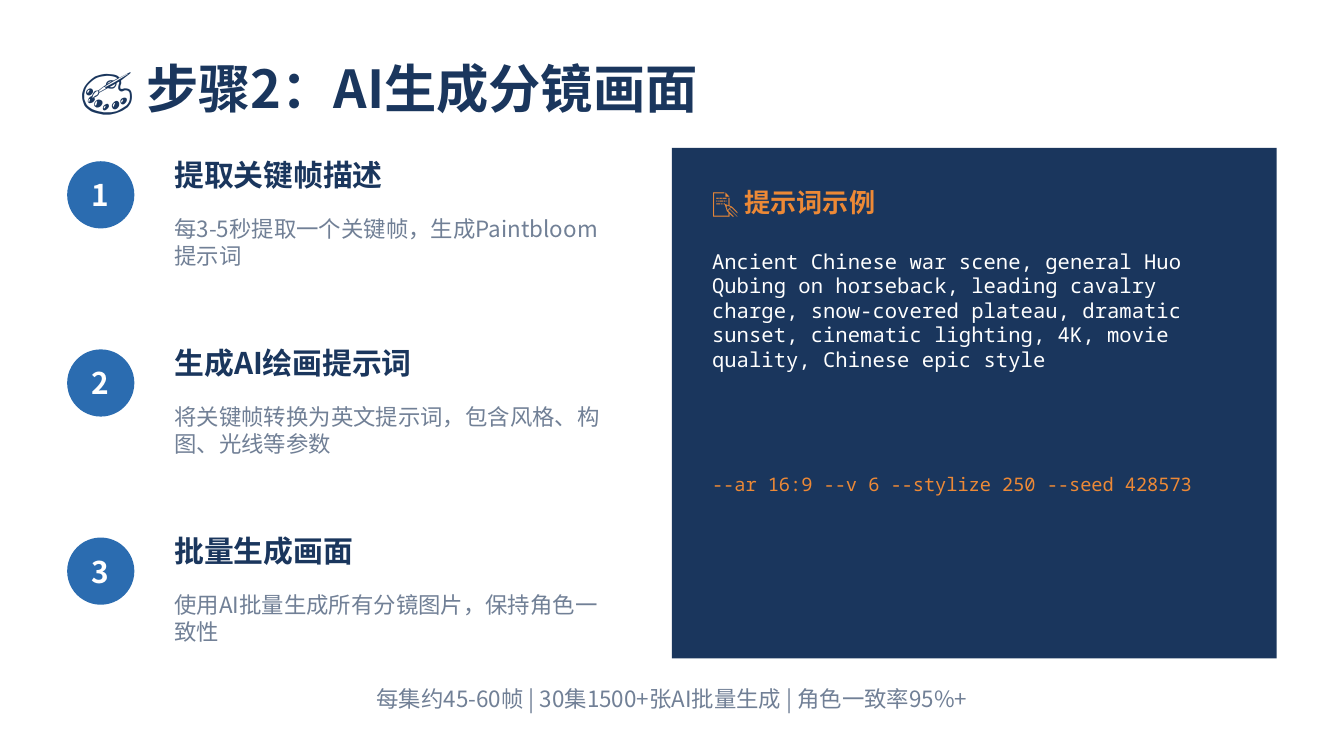
"""Build the storyboard slide: three numbered steps beside a prompt example."""
from lxml.etree import SubElement
from pptx import Presentation
from pptx.dml.color import RGBColor
from pptx.enum.shapes import MSO_SHAPE
from pptx.enum.text import MSO_ANCHOR, PP_ALIGN
from pptx.oxml.ns import qn
from pptx.util import Pt

PX = 4572
SANS, MONO = "Noto Sans CJK SC", "Noto Sans Mono"
NAVY, BLUE, GRAY, ORANGE, WHITE = "1A365D", "2B6CB0", "718096", "ED8936", "FFFFFF"


def add_panel(preset, box, color):
    panel = slide.shapes.add_shape(preset, *[n * PX for n in box])
    panel.shadow.inherit = False
    panel.fill.solid()
    panel.fill.fore_color.rgb = RGBColor.from_string(color)
    panel.line.fill.background()


def add_text(words, box, size, color, bold=False, face=SANS,
             align=PP_ALIGN.LEFT, anchor=MSO_ANCHOR.MIDDLE):
    frame = slide.shapes.add_textbox(*[n * PX for n in box]).text_frame
    frame.word_wrap = True
    frame.vertical_anchor = anchor
    paragraph = frame.paragraphs[0]
    paragraph.alignment = align
    run = paragraph.add_run()
    run.text = words
    for key, value in {"size": Pt(size), "bold": bold, "name": face}.items():
        setattr(run.font, key, value)
    run.font.color.rgb = RGBColor.from_string(color)
    SubElement(run.font._element, qn("a:ea"), typeface=face)


deck = Presentation()
deck.slide_width, deck.slide_height = 2000 * PX, 1125 * PX
slide = deck.slides.add_slide(deck.slide_layouts[6])

add_text("🎨 步骤2：AI生成分镜画面", (100, 60, 1800, 140), 28, NAVY, bold=True)

steps = [
    ("提取关键帧描述", "每3-5秒提取一个关键帧，生成Paintbloom提示词"),
    ("生成AI绘画提示词", "将关键帧转换为英文提示词，包含风格、构图、光线等参数"),
    ("批量生成画面", "使用AI批量生成所有分镜图片，保持角色一致性"),
]
for index, (heading, detail) in enumerate(steps):
    top = 220 + 280 * index
    badge = (100, top + 20, 100, 100)
    add_panel(MSO_SHAPE.OVAL, badge, BLUE)
    add_text(str(index + 1), badge, 16, WHITE, bold=True, align=PP_ALIGN.CENTER)
    add_text(heading, (240, top, 600, 80), 16, NAVY, bold=True)
    add_text(detail, (240, top + 80, 700, 120), 12, GRAY)

add_panel(MSO_SHAPE.RECTANGLE, (1000, 220, 900, 760), NAVY)
add_text("📝 提示词示例", (1040, 260, 800, 80), 14, ORANGE, bold=True)
prompt = ("Ancient Chinese war scene, general Huo Qubing on horseback, "
          "leading cavalry charge, snow-covered plateau, dramatic sunset, "
          "cinematic lighting, 4K, movie quality, Chinese epic style")
add_text(prompt, (1040, 360, 820, 300), 11, WHITE, face=MONO, anchor=MSO_ANCHOR.TOP)
add_text("--ar 16:9 --v 6 --stylize 250 --seed 428573",
         (1040, 680, 820, 80), 10, ORANGE, face=MONO)

add_text("每集约45-60帧 | 30集1500+张AI批量生成 | 角色一致率95%+",
         (100, 1000, 1800, 80), 12, GRAY, align=PP_ALIGN.CENTER)

deck.save("out.pptx")
